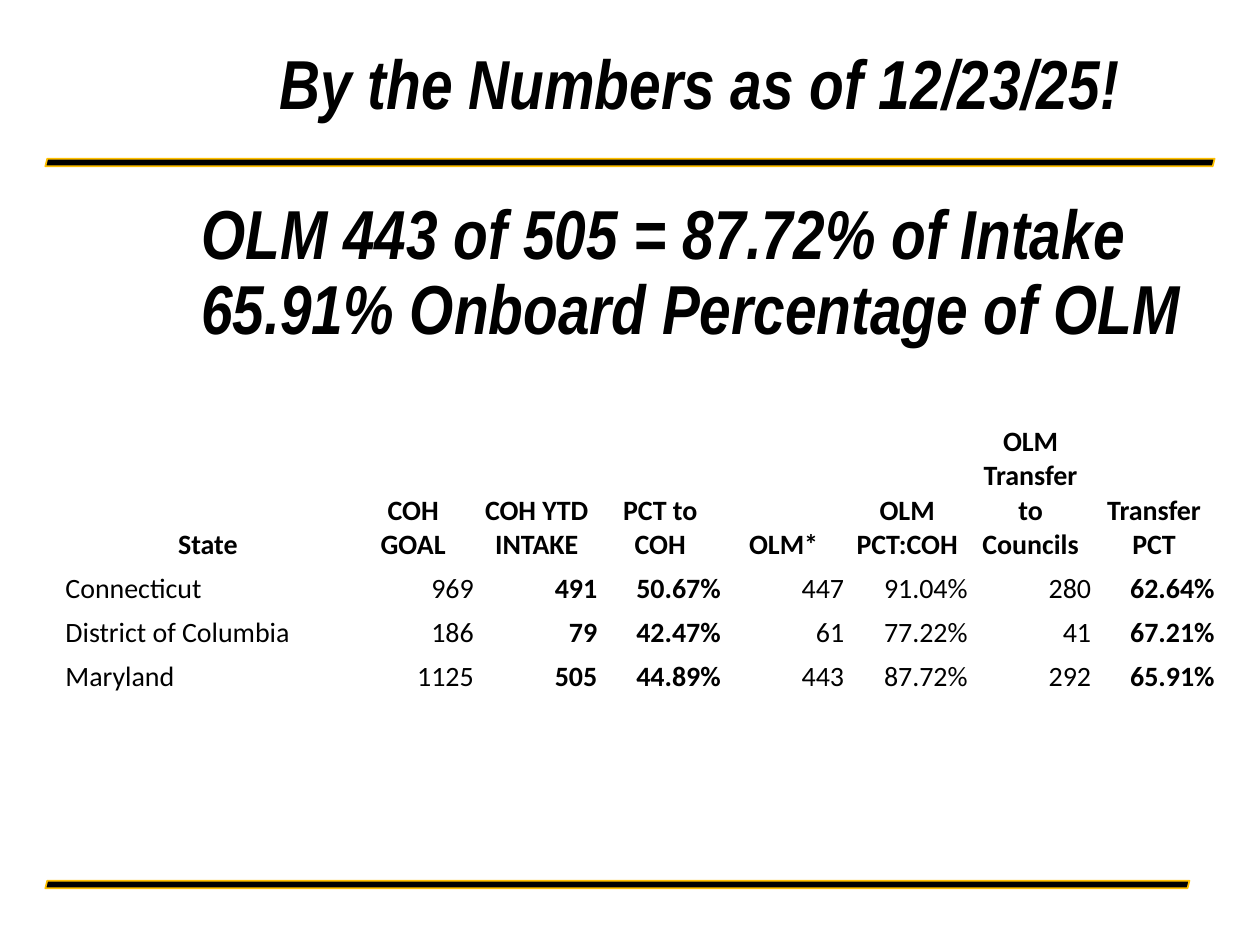
from dataclasses import dataclass

from pptx import Presentation
from pptx.dml.color import RGBColor
from pptx.enum import shapes, text
from pptx.util import Inches, Pt


@dataclass(frozen=True)
class Theme:
    ink: RGBColor = RGBColor(0x00, 0x00, 0x00)
    gold: RGBColor = RGBColor(0xFF, 0xC0, 0x00)
    title_font: str = "Arial Narrow"
    table_font: str = "Calibri"
    title_size: float = 39.6
    table_size: float = 16


@dataclass(frozen=True)
class Rule:
    top: float
    width: float


@dataclass(frozen=True)
class TitleLine:
    wording: str
    indent: float = 0
    space_before: float = 0


@dataclass(frozen=True)
class Column:
    heading: str
    width: float = 0.98
    bold: bool = False
    align: text.PP_ALIGN = text.PP_ALIGN.RIGHT


THEME = Theme()
RULES = [Rule(1.26, 9.28), Rule(6.99, 9.08)]
TITLE = [
    TitleLine("By the Numbers as of 12/23/25!", indent=0.62),
    TitleLine("OLM 443 of 505 = 87.72% of Intake", space_before=43),
    TitleLine("65.91% Onboard Percentage of OLM"),
]
COLUMNS = [
    Column("State", width=2.28, align=text.PP_ALIGN.LEFT),
    Column("COH GOAL"),
    Column("COH YTD INTAKE", bold=True),
    Column("PCT to COH", bold=True),
    Column("OLM*"),
    Column("OLM PCT:COH"),
    Column("OLM Transfer to Councils"),
    Column("Transfer PCT", bold=True),
]
STATES = [
    ("Connecticut", "969", "491", "50.67%", "447", "91.04%", "280", "62.64%"),
    ("District of Columbia", "186", "79", "42.47%", "61", "77.22%", "41", "67.21%"),
    ("Maryland", "1125", "505", "44.89%", "443", "87.72%", "292", "65.91%"),
]
HEADER_HEIGHT, STATE_HEIGHT = 1.41, 0.35


def add_run(paragraph, wording: str, font: str, size: float,
            bold: bool, italic: bool = False) -> None:
    run = paragraph.add_run()
    run.text = wording
    run.font.name = font
    run.font.size = Pt(size)
    run.font.bold = bold
    run.font.italic = italic
    run.font.color.rgb = THEME.ink


def add_rule(slide, rule: Rule) -> None:
    bar = slide.shapes.add_shape(
        shapes.MSO_SHAPE.PARALLELOGRAM,
        Inches(0.36), Inches(rule.top), Inches(rule.width), Inches(0.06))
    bar.shadow.inherit = False
    bar.fill.solid()
    bar.fill.fore_color.rgb = THEME.ink
    bar.line.color.rgb = THEME.gold
    bar.line.width = Pt(1)


def add_title(slide, lines: list[TitleLine]) -> None:
    frame = slide.shapes.add_textbox(
        Inches(1.5), Inches(0.12), Inches(8.14), Inches(2.93)).text_frame
    frame.word_wrap = True
    frame.vertical_anchor = text.MSO_ANCHOR.MIDDLE
    for index, line in enumerate(lines):
        paragraph = frame.add_paragraph() if index else frame.paragraphs[0]
        paragraph.line_spacing = 0.9
        if line.space_before:
            paragraph.space_before = Pt(line.space_before)
        if line.indent:
            paragraph._p.get_or_add_pPr().set("indent", str(Inches(line.indent)))
        add_run(paragraph, line.wording, THEME.title_font, THEME.title_size,
                bold=True, italic=True)


def fill_cell(cell, wording: str, align: text.PP_ALIGN, bold: bool) -> None:
    cell.fill.background()
    cell.vertical_anchor = text.MSO_ANCHOR.BOTTOM
    cell.margin_left = cell.margin_right = cell.margin_top = Inches(0.01)
    cell.margin_bottom = 0
    paragraph = cell.text_frame.paragraphs[0]
    paragraph.alignment = align
    add_run(paragraph, wording, THEME.table_font, THEME.table_size, bold)


def add_state_table(slide) -> None:
    width = sum(column.width for column in COLUMNS)
    height = HEADER_HEIGHT + STATE_HEIGHT * len(STATES)
    table = slide.shapes.add_table(
        len(STATES) + 1, len(COLUMNS),
        Inches(0.51), Inches(3.05), Inches(width), Inches(height)).table
    table.first_row = table.horz_banding = False
    for index, row in enumerate(table.rows):
        row.height = Inches(STATE_HEIGHT if index else HEADER_HEIGHT)
    for col, column in enumerate(COLUMNS):
        table.columns[col].width = Inches(column.width)
        fill_cell(table.cell(0, col), column.heading, text.PP_ALIGN.CENTER, True)
        for row, state in enumerate(STATES, start=1):
            fill_cell(table.cell(row, col), state[col], column.align, column.bold)


def main() -> None:
    deck = Presentation()
    deck.slide_width, deck.slide_height = Inches(10), Inches(7.5)
    slide = deck.slides.add_slide(deck.slide_layouts[6])
    for rule in RULES:
        add_rule(slide, rule)
    add_title(slide, TITLE)
    add_state_table(slide)
    deck.save("out.pptx")


if __name__ == "__main__":
    main()
